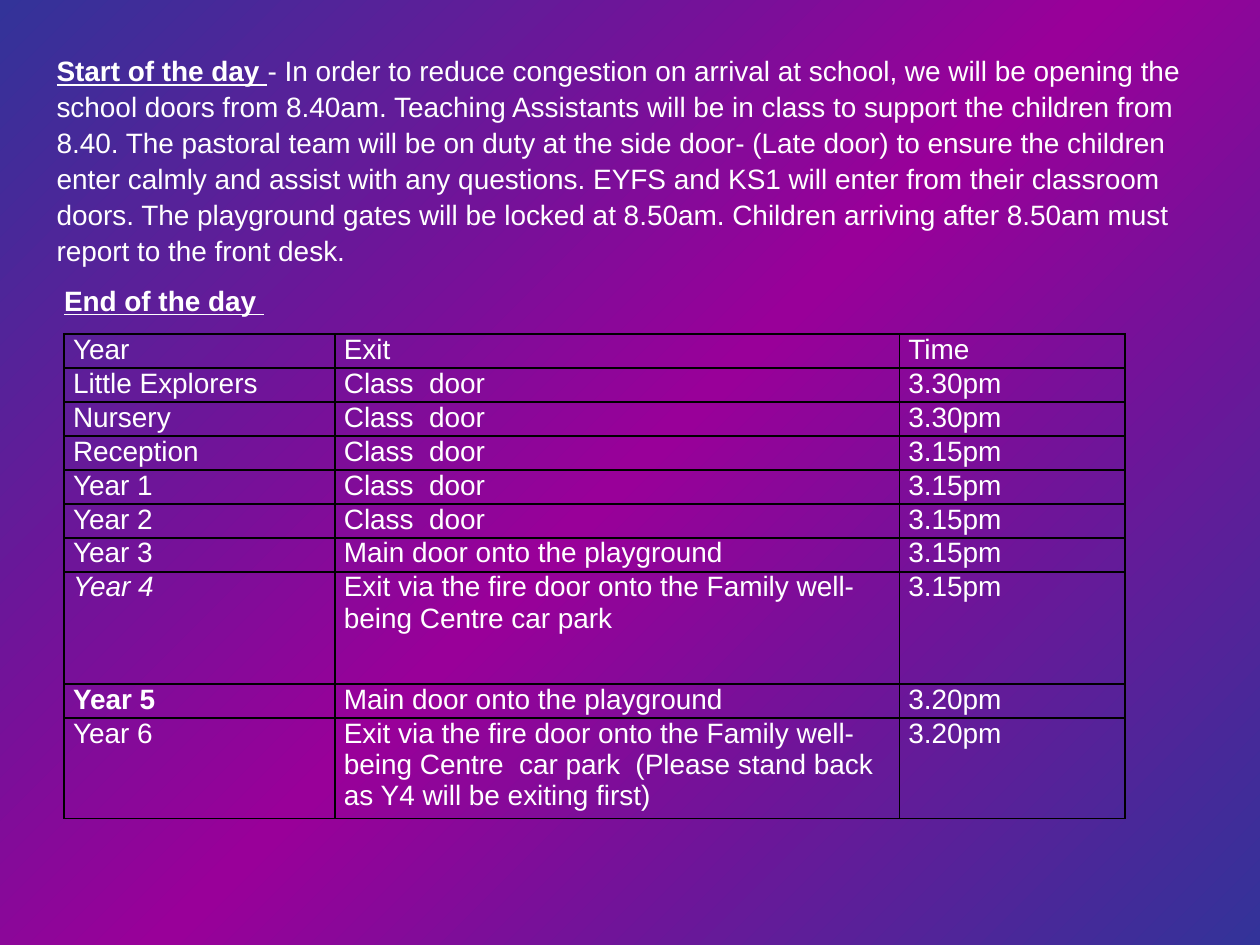
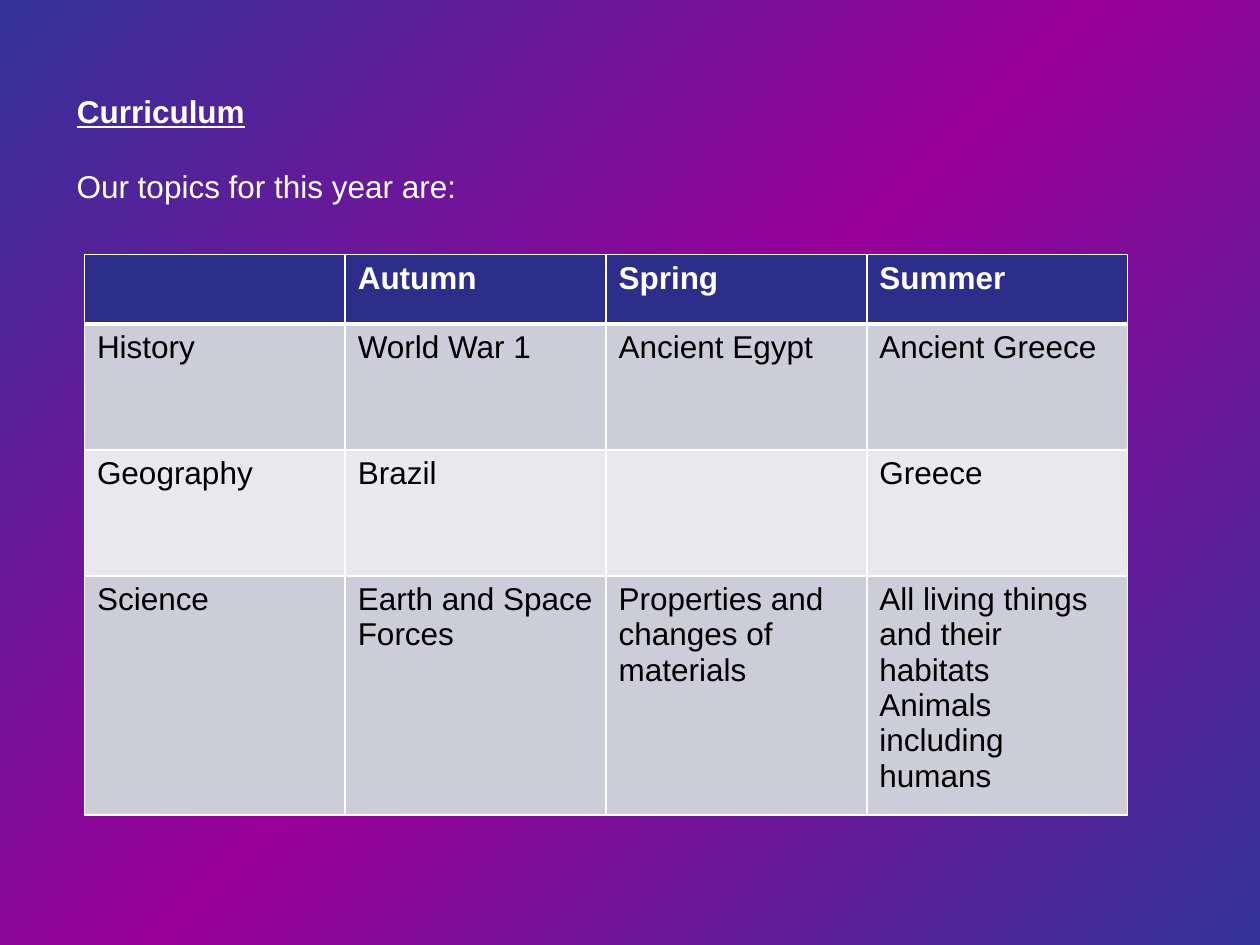
from lxml import etree
from pptx import Presentation
from pptx.dml.color import RGBColor
from pptx.enum import text
from pptx.oxml import ns
from pptx.util import Inches, Pt
from copy import deepcopy

# Content
START_HEADING = "Start of the day"
START_NOTE = (
    "- In order to reduce congestion on arrival at school, we will be opening the "
    "school doors from 8.40am. Teaching Assistants will be in class to support the "
    "children from 8.40. The pastoral team will be on duty at the side door- (Late door) "
    "to ensure the children enter calmly and assist with any questions. EYFS and KS1 will "
    "enter from their classroom doors. The playground gates will be locked at 8.50am. "
    "Children arriving after 8.50am must report to the front desk."
)
END_HEADING = "End of the day "
EXITS = [
    ("Year", "Exit", "Time"),
    ("Little Explorers", "Class  door", "3.30pm"),
    ("Nursery", "Class  door", "3.30pm"),
    ("Reception", "Class  door", "3.15pm"),
    ("Year 1", "Class  door", "3.15pm"),
    ("Year 2", "Class  door", "3.15pm"),
    ("Year 3", "Main door onto the playground", "3.15pm"),
    ("Year 4", "Exit via the fire door onto the Family well-being Centre car park", "3.15pm"),
    ("Year 5", "Main door onto the playground", "3.20pm"),
    ("Year 6", "Exit via the fire door onto the Family well-being Centre  car park  "
               "(Please stand back as Y4 will be exiting first)", "3.20pm"),
]
TALL_EXIT_ROWS = {"Year 4": 0.89, "Year 6": 0.8}

CURRICULUM_HEADING = "Curriculum"
TOPICS_INTRO = "Our topics for this year are:"
TOPICS = [
    ("", "Autumn", "Spring", "Summer"),
    ("History", "World War 1", "Ancient Egypt", "Ancient Greece"),
    ("Geography", "Brazil", "", "Greece"),
    ("Science", "Earth and Space\nForces", "Properties and changes of materials",
     "All living things and their habitats\nAnimals including humans"),
]

# Shared look
FONT = "Arial"
WHITE = RGBColor(0xFF, 0xFF, 0xFF)
BLACK = RGBColor(0x00, 0x00, 0x00)
BLUE = RGBColor(0x33, 0x33, 0x99)
PURPLE = RGBColor(0x99, 0x00, 0x99)
HEADER_BLUE = RGBColor(0x2D, 0x2D, 0x8A)
BAND_DARK = RGBColor(0xCD, 0xCD, 0xDA)
BAND_LIGHT = RGBColor(0xE8, 0xE8, 0xED)


def paint_background(master):
    fill = master.background.fill
    fill.gradient()
    fill.gradient_angle = 315
    stop_list = master.element.find(".//" + ns.qn("p:bg")).find(".//" + ns.qn("a:gsLst"))
    stop_list.insert(1, deepcopy(stop_list[0]))
    for stop, (position, color) in zip(fill.gradient_stops, [(0, BLUE), (0.5, PURPLE), (1, BLUE)]):
        stop.position = position
        stop.color.rgb = color


def style_run(run, size, color=WHITE, bold=False, italic=False, underline=False):
    font = run.font
    font.name, font.size, font.color.rgb = FONT, Pt(size), color
    font.bold, font.italic, font.underline = bold, italic, underline


def add_run(paragraph, words, size, **style):
    run = paragraph.add_run()
    run.text = words
    style_run(run, size, **style)


def prepare_frame(shape):
    frame = shape.text_frame
    frame.word_wrap = True
    frame.auto_size = text.MSO_AUTO_SIZE.NONE
    frame.vertical_anchor = text.MSO_ANCHOR.TOP
    return frame


def add_text(slide, left, top, width, height):
    box = slide.shapes.add_textbox(Inches(left), Inches(top), Inches(width), Inches(height))
    return prepare_frame(box)


def set_borders(cell, color, **widths):
    properties = cell._tc.get_or_add_tcPr()
    for index, side in enumerate("LRTB"):
        line = etree.Element(ns.qn("a:ln" + side), w=str(Pt(widths.get(side, 1))))
        solid = etree.SubElement(line, ns.qn("a:solidFill"))
        etree.SubElement(solid, ns.qn("a:srgbClr"), val=str(color))
        properties.insert(index, line)


def add_grid(slide, rows, left, top, widths, heights, margins):
    """Add a plain table and yield its cells with their row and column."""
    table = slide.shapes.add_table(
        len(rows), len(widths), Inches(left), Inches(top),
        Inches(sum(widths)), Inches(sum(heights))).table
    table.first_row = table.horz_banding = False
    for column, width in zip(table.columns, widths):
        column.width = Inches(width)
    for row, height in zip(table.rows, heights):
        row.height = Inches(height)
    side, edge = map(Inches, margins)
    for r, values in enumerate(rows):
        for c, value in enumerate(values):
            cell = table.cell(r, c)
            cell.text = value
            cell.margin_left = cell.margin_right = side
            cell.margin_top = cell.margin_bottom = edge
            yield r, c, cell


def style_cell(cell, size, **style):
    for paragraph in cell.text_frame.paragraphs:
        for run in paragraph.runs:
            style_run(run, size, **style)


def build_school_day(prs):
    slide = prs.slides.add_slide(prs.slide_layouts[6])

    # Arrival note and heading for the exits
    frame = add_text(slide, 0.35, 0.36, 9.29, 2.21)
    start = frame.paragraphs[0]
    add_run(start, START_HEADING, 16, bold=True, underline=True)
    add_run(start, " ", 16, underline=True)
    add_run(start, START_NOTE, 16)
    end = frame.add_paragraph()
    end.space_before = Pt(8)
    end._p.get_or_add_pPr().set("marL", str(Inches(0.06)))
    add_run(end, END_HEADING, 16, bold=True, underline=True)
    start.line_spacing = end.line_spacing = 1.07

    # Exits by year
    heights = [TALL_EXIT_ROWS.get(row[0], 0.27) for row in EXITS]
    for _, _, cell in add_grid(slide, EXITS, 0.51, 2.65, [2.15, 4.48, 1.79], heights, (0.07, 0)):
        style_cell(cell, 16, bold=cell.text == "Year 5", italic=cell.text == "Year 4")
        cell.fill.background()
        set_borders(cell, BLACK)


def build_curriculum(prs):
    slide = prs.slides.add_slide(prs.slide_layouts[5])

    # Heading and introduction
    title = slide.shapes.title
    title.left, title.top, title.width, title.height = map(Inches, (0.51, 0.68, 9.06, 0.45))
    heading = prepare_frame(title).paragraphs[0]
    heading.alignment = text.PP_ALIGN.LEFT
    add_run(heading, CURRICULUM_HEADING, 18, bold=True, underline=True)
    intro = add_text(slide, 0.51, 1.28, 9.06, 0.45)
    add_run(intro.paragraphs[0], TOPICS_INTRO, 18)

    # Topics by term
    heights = [0.55, 1, 1, 1.9]
    for r, _, cell in add_grid(slide, TOPICS, 0.67, 2.02, [2.07] * 4, heights, (0.1, 0.05)):
        header = r == 0
        style_cell(cell, 18, color=WHITE if header else BLACK, bold=header)
        cell.fill.solid()
        cell.fill.fore_color.rgb = HEADER_BLUE if header else (BAND_LIGHT, BAND_DARK)[r % 2]
        set_borders(cell, WHITE, T=3 if r == 1 else 1, B=3 if header else 1)


def main():
    prs = Presentation()
    prs.slide_width, prs.slide_height = Inches(10), Inches(7.5)
    paint_background(prs.slide_master)
    build_school_day(prs)
    build_curriculum(prs)
    prs.save("out.pptx")


if __name__ == "__main__":
    main()
